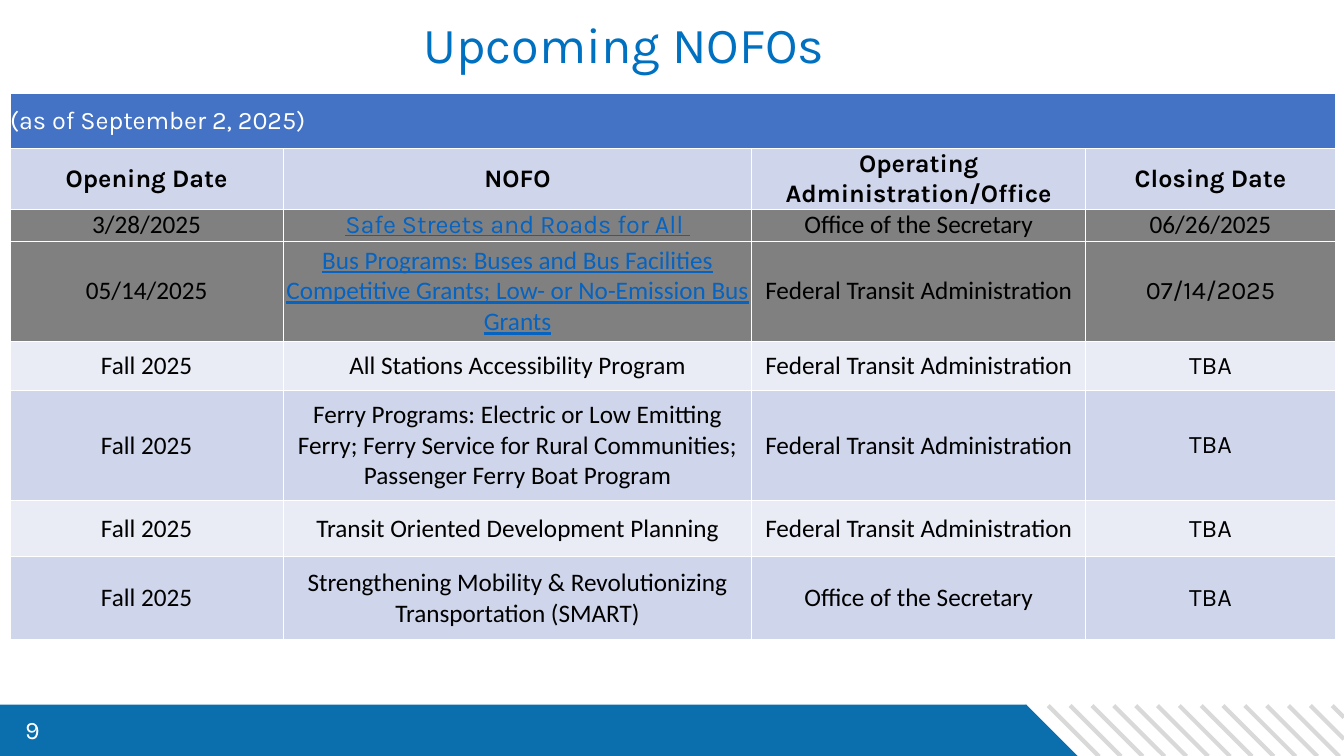
from dataclasses import dataclass

from lxml.etree import SubElement
from pptx import Presentation
from pptx.dml.color import RGBColor
from pptx.enum.shapes import MSO_CONNECTOR, MSO_SHAPE
from pptx.enum.text import MSO_ANCHOR, MSO_AUTO_SIZE, PP_ALIGN
from pptx.oxml.ns import qn
from pptx.slide import Slide
from pptx.table import _Cell
from pptx.util import Pt

WHITE = RGBColor(0xFF, 0xFF, 0xFF)
BLACK = RGBColor(0x00, 0x00, 0x00)
TITLE_BLUE = RGBColor(0x00, 0x70, 0xC0)
FOOTER_BLUE = RGBColor(0x0B, 0x6F, 0xAD)
BANNER_BLUE = RGBColor(0x44, 0x72, 0xC4)
LINK_BLUE = RGBColor(0x05, 0x63, 0xC1)
STRIPE_GRAY = RGBColor(0xD9, 0xD9, 0xD9)
CLOSED_GRAY = RGBColor(0x80, 0x80, 0x80)
DARK_BAND = RGBColor(0xCF, 0xD5, 0xEA)
LIGHT_BAND = RGBColor(0xE9, 0xEB, 0xF5)

HEADING_FONT = "Karla"
BODY_FONT = "Calibri"
SLIDE_WIDTH, SLIDE_HEIGHT = 960, 540
COLUMN_WIDTHS = (195.1, 334.8, 238.3, 178.6)
BANNER_HEIGHT, HEADER_HEIGHT = 39.6, 40.3
HEADERS = ("Opening Date", "NOFO", "Operating Administration/Office", "Closing Date")
TRANSIT = "Federal Transit Administration"
SECRETARY = "Office of the Secretary"


@dataclass
class Nofo:
    opening: str
    name: str
    office: str
    closing: str
    height: float
    fill: RGBColor
    linked: bool = False
    name_font: str = BODY_FONT
    closing_font: str = HEADING_FONT


@dataclass
class FooterShape:
    kind: MSO_SHAPE
    left: float
    top: float
    width: float
    height: float
    rotation: float = 0


NOFOS = (
    Nofo("3/28/2025", "Safe Streets and Roads for All ", SECRETARY, "06/26/2025",
         23, CLOSED_GRAY, True, HEADING_FONT, BODY_FONT),
    Nofo("05/14/2025", "Bus Programs: Buses and Bus Facilities Competitive Grants; "
         "Low- or No-Emission Bus Grants", TRANSIT, "07/14/2025", 71.3, CLOSED_GRAY, True),
    Nofo("Fall 2025", "All Stations Accessibility Program", TRANSIT, "TBA", 35.3, LIGHT_BAND),
    Nofo("Fall 2025", "Ferry Programs: Electric or Low Emitting Ferry; Ferry Service for "
         "Rural Communities; Passenger Ferry Boat Program", TRANSIT, "TBA", 78.5, DARK_BAND),
    Nofo("Fall 2025", "Transit Oriented Development Planning", TRANSIT, "TBA",
         40.3, LIGHT_BAND),
    Nofo("Fall 2025", "Strengthening Mobility & Revolutionizing Transportation (SMART)",
         SECRETARY, "TBA", 59, DARK_BAND),
)

FOOTER_SHAPES = (
    FooterShape(MSO_SHAPE.RECTANGLE, 0, 503.3, 733, 37.4),
    FooterShape(MSO_SHAPE.ISOSCELES_TRIANGLE, 715.7, 517.7, 52.6, 26.6, 225),
)


def add_footer_shape(page: Slide, item: FooterShape) -> None:
    shape = page.shapes.add_shape(item.kind, Pt(item.left), Pt(item.top),
                                  Pt(item.width), Pt(item.height))
    shape.rotation = item.rotation
    shape.shadow.inherit = False
    shape.fill.solid()
    shape.fill.fore_color.rgb = FOOTER_BLUE
    shape.line.fill.background()


def add_stripes(page: Slide) -> None:
    top, pitch = 504, 15.6
    for index in range(14):
        left = 748.8 + index * pitch
        run = min(36.3, SLIDE_WIDTH - left)
        stripe = page.shapes.add_connector(MSO_CONNECTOR.STRAIGHT, Pt(left), Pt(top),
                                           Pt(left + run), Pt(top + run))
        stripe.line.color.rgb = STRIPE_GRAY
        stripe.line.width = Pt(3)
        SubElement(stripe._element.spPr, qn("a:effectLst"))


def add_page_number(page: Slide) -> None:
    box = page.shapes.add_textbox(Pt(10.8), Pt(506.9), Pt(40.3), Pt(28.8))
    frame = box.text_frame
    frame.word_wrap = True
    frame.vertical_anchor = MSO_ANCHOR.MIDDLE
    para = frame.paragraphs[0]
    para.text = "9"
    para.font.size = Pt(18)
    para.font.name = HEADING_FONT
    para.font.color.rgb = WHITE


def format_title(page: Slide) -> None:
    title = page.shapes.title
    title.left, title.top, title.width, title.height = Pt(24.5), Pt(10.8), Pt(842.4), Pt(74.9)
    frame = title.text_frame
    frame.auto_size = MSO_AUTO_SIZE.NONE
    frame.vertical_anchor = MSO_ANCHOR.TOP
    para = frame.paragraphs[0]
    para.text = "Upcoming NOFOs"
    para.alignment = PP_ALIGN.CENTER
    para.line_spacing = 0.9
    para.font.size = Pt(36)
    para.font.name = HEADING_FONT
    para.font.color.rgb = TITLE_BLUE


def fill_cell(cell: _Cell, text: str, fill: RGBColor, font: str, color: RGBColor = BLACK,
              bold: bool = False, underline: bool = False,
              align: PP_ALIGN = PP_ALIGN.CENTER) -> None:
    # White borders go ahead of the fill in the cell properties
    properties = cell._tc.get_or_add_tcPr()
    for side in ("a:lnL", "a:lnR", "a:lnT", "a:lnB"):
        border = SubElement(properties, qn(side), w=str(Pt(1)))
        SubElement(SubElement(border, qn("a:solidFill")), qn("a:srgbClr"), val=str(WHITE))
    cell.fill.solid()
    cell.fill.fore_color.rgb = fill
    cell.margin_left = cell.margin_right = cell.margin_top = cell.margin_bottom = 0
    cell.vertical_anchor = MSO_ANCHOR.MIDDLE
    para = cell.text_frame.paragraphs[0]
    para.text = text
    para.alignment = align
    para.font.size = Pt(18)
    para.font.name = font
    para.font.bold = bold
    para.font.underline = underline
    para.font.color.rgb = color


def add_nofo_table(page: Slide) -> None:
    heights = (BANNER_HEIGHT, HEADER_HEIGHT, *(nofo.height for nofo in NOFOS))
    table = page.shapes.add_table(len(heights), len(COLUMN_WIDTHS), Pt(7.2), Pt(66.6),
                                  Pt(sum(COLUMN_WIDTHS)), Pt(sum(heights))).table
    table.first_row = table.horz_banding = False
    for column, width in zip(table.columns, COLUMN_WIDTHS):
        column.width = Pt(width)
    for row, height in zip(table.rows, heights):
        row.height = Pt(height)

    # Banner and column headings
    banner = table.cell(0, 0)
    banner.merge(table.cell(0, len(COLUMN_WIDTHS) - 1))
    fill_cell(banner, "(as of September 2, 2025)", BANNER_BLUE, HEADING_FONT, WHITE,
              align=PP_ALIGN.LEFT)
    for column, heading in enumerate(HEADERS):
        fill_cell(table.cell(1, column), heading, DARK_BAND, HEADING_FONT, bold=True)

    # One row per funding notice
    for row, nofo in enumerate(NOFOS, start=2):
        fill_cell(table.cell(row, 0), nofo.opening, nofo.fill, BODY_FONT)
        fill_cell(table.cell(row, 1), nofo.name, nofo.fill, nofo.name_font,
                  LINK_BLUE if nofo.linked else BLACK, underline=nofo.linked)
        fill_cell(table.cell(row, 2), nofo.office, nofo.fill, BODY_FONT)
        fill_cell(table.cell(row, 3), nofo.closing, nofo.fill, nofo.closing_font)


def main() -> None:
    deck = Presentation()
    deck.slide_width, deck.slide_height = Pt(SLIDE_WIDTH), Pt(SLIDE_HEIGHT)
    page = deck.slides.add_slide(deck.slide_layouts.get_by_name("Title Only"))
    format_title(page)
    add_stripes(page)
    for item in FOOTER_SHAPES:
        add_footer_shape(page, item)
    add_page_number(page)
    add_nofo_table(page)
    deck.save("out.pptx")


if __name__ == "__main__":
    main()
